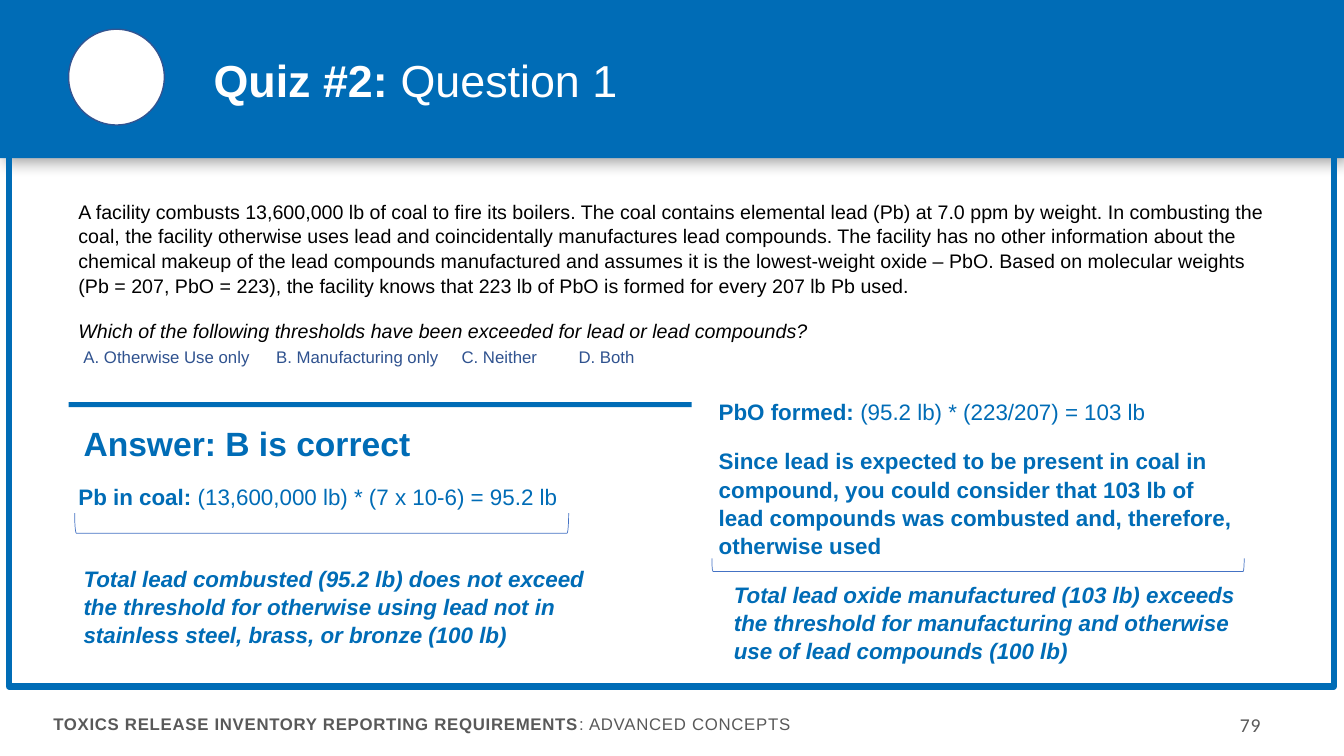
from dataclasses import dataclass

from lxml.etree import SubElement
from pptx import Presentation
from pptx.dml.color import RGBColor
from pptx.enum.shapes import MSO_SHAPE
from pptx.enum.text import MSO_ANCHOR, PP_ALIGN
from pptx.oxml.ns import qn
from pptx.util import Inches, Pt


@dataclass(frozen=True)
class Theme:
    blue: str = "006CB6"
    white: str = "FFFFFF"
    black: str = "000000"
    grey: str = "595959"
    choice: str = "2F528F"
    bracket: str = "4472C4"
    ring: str = "325491"
    font: str = "Arial"
    number_font: str = "Calibri"
    title_size: int = 32
    answer_size: int = 24
    working_size: int = 16
    body_size: int = 14
    small_size: int = 12


class SlideBuilder:
    def __init__(self, slide, theme):
        self.slide = slide
        self.theme = theme

    def shape(self, kind, box, fill=None, line=None, width=1, rotation=0):
        shape = self.slide.shapes.add_shape(kind, *map(Inches, box))
        shape.shadow.inherit = False
        shape.rotation = rotation
        if fill:
            shape.fill.solid()
            shape.fill.fore_color.rgb = RGBColor.from_string(fill)
        else:
            shape.fill.background()
        if line:
            shape.line.color.rgb = RGBColor.from_string(line)
            shape.line.width = Pt(width)
        else:
            shape.line.fill.background()
        return shape

    def header(self, box):
        shape = self.shape(MSO_SHAPE.RECTANGLE, box, fill=self.theme.blue)
        effects = shape.element.spPr.find(qn("a:effectLst"))
        shadow = SubElement(effects, qn("a:outerShdw"), blurRad=str(Pt(10)),
                            dist=str(Pt(4)), dir="2700000", rotWithShape="0")
        color = SubElement(shadow, qn("a:srgbClr"), val=self.theme.black)
        SubElement(color, qn("a:alpha"), val="34000")

    def bracket(self, left, top, width, depth):
        center_x, center_y = left + width / 2, top + depth / 2
        box = (center_x - depth / 2, center_y - width / 2, depth, width)
        self.shape(MSO_SHAPE.RIGHT_BRACKET, box, line=self.theme.bracket,
                   width=0.5, rotation=90)

    def text(self, box, paragraphs, size, color, font=None, spacing=1.0,
             tracking=0, align=PP_ALIGN.LEFT, anchor=MSO_ANCHOR.TOP):
        frame = self.slide.shapes.add_textbox(*map(Inches, box)).text_frame
        frame.word_wrap = True
        frame.vertical_anchor = anchor
        for index, runs in enumerate(paragraphs):
            paragraph = frame.add_paragraph() if index else frame.paragraphs[0]
            paragraph.alignment = align
            paragraph.line_spacing = spacing
            if index:
                paragraph.space_before = Pt(5)
            if index < len(paragraphs) - 1:
                paragraph.space_after = Pt(10)
            for words, style in runs:
                run = paragraph.add_run()
                run.text = words
                run.font.name = font or self.theme.font
                run.font.size = Pt(size)
                run.font.bold = "b" in style
                run.font.italic = "i" in style
                run.font.color.rgb = RGBColor.from_string(color)
                if tracking:
                    run.font._element.set("spc", str(tracking))

    def working(self, box, paragraphs):
        self.text(box, paragraphs, self.theme.working_size, self.theme.blue,
                  spacing=1.05)


def main():
    presentation = Presentation()
    presentation.slide_width = Inches(13.33)
    presentation.slide_height = Inches(7.5)
    theme = Theme()
    slide = presentation.slides.add_slide(presentation.slide_layouts[6])
    builder = SlideBuilder(slide, theme)

    builder.header((0, 0, 13.33, 1.57))
    builder.text((11.27, 7.02, 1.33, 0.34), [[("79", "")]], theme.body_size,
                 theme.grey, font=theme.number_font, tracking=50,
                 align=PP_ALIGN.RIGHT)
    builder.shape(MSO_SHAPE.OVAL, (0.68, 0.29, 0.95, 0.95), theme.white,
                  theme.ring)
    builder.text((0.43, 7.03, 8.42, 0.3), [[
        ("TOXICS RELEASE INVENTORY REPORTING REQUIREMENTS", "b"),
        (": ADVANCED CONCEPTS", "")]],
        theme.small_size, theme.grey, tracking=50)
    builder.shape(MSO_SHAPE.RECTANGLE, (0.09, 0.07, 13.14, 6.74),
                  line=theme.blue, width=4.5)
    builder.text((2.02, 0.42, 11.2, 0.81),
                 [[("Quiz #2: ", "b"), ("Question 1", "")]],
                 theme.title_size, theme.white, spacing=0.9,
                 anchor=MSO_ANCHOR.MIDDLE)

    builder.text((0.68, 1.92, 11.97, 1.15), [
        [("A facility combusts 13,600,000 lb of coal to fire its boilers. "
          "The coal contains elemental lead (Pb) at 7.0 ppm by weight. "
          "In combusting the coal, the facility otherwise uses lead and "
          "coincidentally manufactures lead compounds. The facility has no "
          "other information about the chemical makeup of the lead compounds "
          "manufactured and assumes it is the lowest-weight oxide – PbO. "
          "Based on molecular weights (Pb = 207, PbO = 223), the facility "
          "knows that 223 lb of PbO is formed for every 207 lb Pb used.", "")],
        [("Which of the following thresholds have been exceeded for lead or "
          "lead compounds?", "i")]],
        theme.body_size, theme.black, spacing=1.05)
    choices = [(0.73, "A. Otherwise Use only"), (2.64, "B. Manufacturing only"),
               (4.48, "C. Neither"), (5.64, "D. Both")]
    for left, choice in choices:
        builder.text((left, 3.39, 2.06, 0.3), [[(choice, "")]],
                     theme.small_size, theme.choice)

    builder.shape(MSO_SHAPE.RECTANGLE, (0.68, 3.99, 6.18, 0.05), theme.blue)
    builder.text((0.73, 4.13, 3.99, 0.47), [[("Answer: B is correct", "b")]],
                 theme.answer_size, theme.blue, spacing=1.05)
    builder.working((0.68, 4.73, 5.42, 0.3), [[
        ("Pb in coal: ", "b"),
        ("(13,600,000 lb) * (7 x 10-6) = 95.2 lb", "")]])
    builder.bracket(0.74, 5.09, 4.9, 0.2)
    builder.working((0.73, 5.54, 5.28, 0.98), [[
        ("Total lead combusted (95.2 lb) does not exceed the threshold for "
         "otherwise using lead not in stainless steel, brass, or bronze "
         "(100 lb)", "bi")]])

    builder.working((7.03, 3.89, 5.31, 1.62), [
        [("PbO formed: ", "b"), ("(95.2 lb) * (223/207) = 103 lb", "")],
        [("Since lead is expected to be present in coal in compound, you could "
          "consider that 103 lb of lead compounds was combusted and, "
          "therefore, otherwise used", "b")]])
    builder.bracket(7.06, 5.54, 5.28, 0.13)
    builder.working((7.18, 5.7, 5.28, 0.98), [[
        ("Total lead oxide manufactured (103 lb) exceeds the threshold for "
         "manufacturing and otherwise use of lead compounds (100 lb)", "bi")]])

    presentation.save("out.pptx")


if __name__ == "__main__":
    main()
